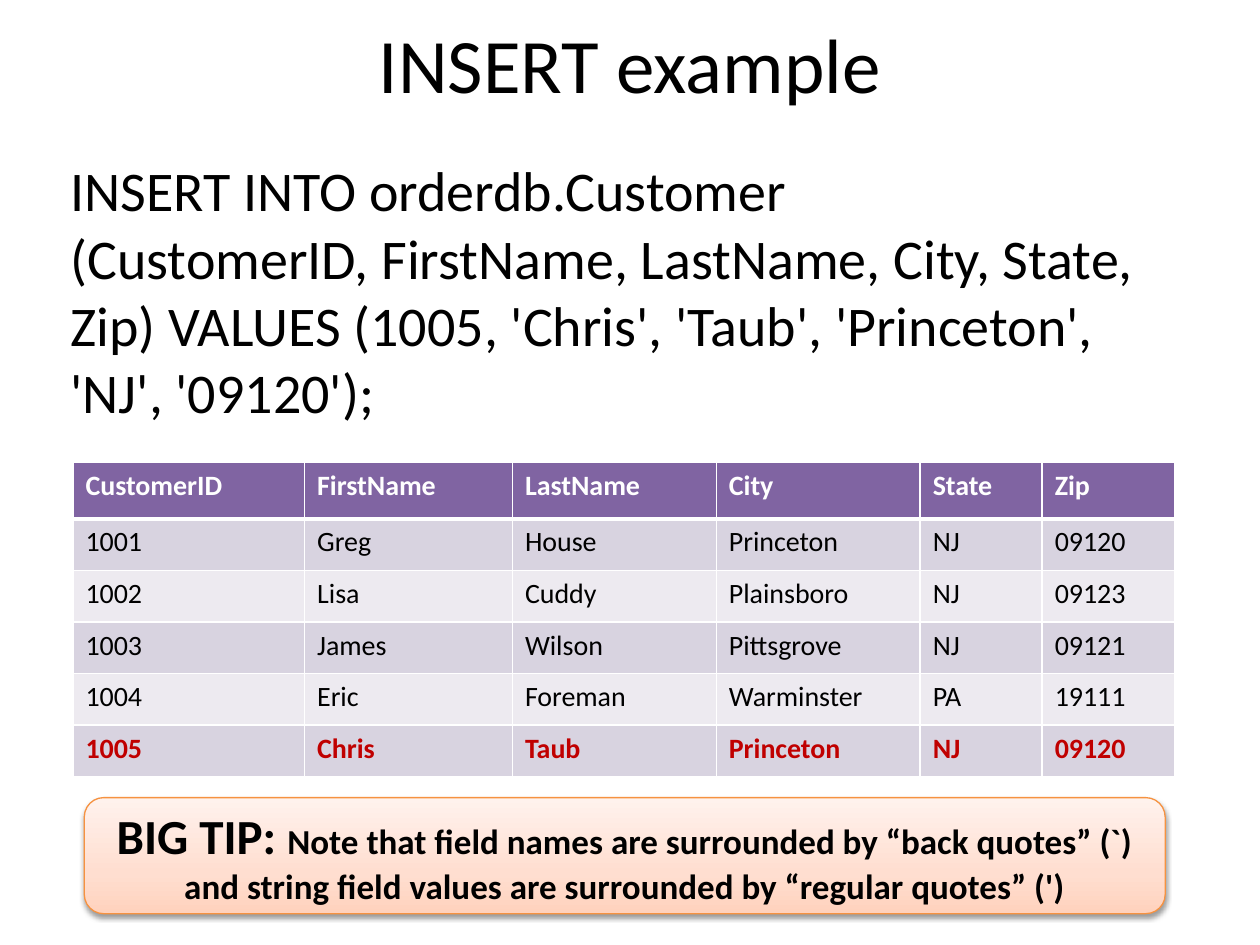
from lxml import etree
from pptx import Presentation, util as u
from pptx.dml.color import RGBColor
from pptx.enum import shapes, text
from pptx.oxml import parse_xml
from pptx.oxml.ns import qn

FONT = "Calibri"
COLORS = {
    "text": "000000", "white": "FFFFFF", "header": "8064A2",
    "band_dark": "D8D3E0", "band_light": "EDEAF0", "new_row": "C00000",
    "tip_line": "F69240", "tip_low": "FFD2BD", "tip_mid": "FFDED0",
    "tip_high": "FFF2ED",
}
NS = 'xmlns:a="http://schemas.openxmlformats.org/drawingml/2006/main"'

STATEMENT = ("INSERT INTO orderdb.Customer \v(CustomerID, FirstName, LastName, "
             "City, State, Zip) VALUES (1005, 'Chris', 'Taub', 'Princeton', "
             "'NJ', '09120');")
CUSTOMERS = [
    ("CustomerID", "FirstName", "LastName", "City", "State", "Zip"),
    ("1001", "Greg", "House", "Princeton", "NJ", "09120"),
    ("1002", "Lisa", "Cuddy", "Plainsboro", "NJ", "09123"),
    ("1003", "James", "Wilson", "Pittsgrove", "NJ", "09121"),
    ("1004", "Eric", "Foreman", "Warminster", "PA", "19111"),
    ("1005", "Chris", "Taub", "Princeton", "NJ", "09120"),
]
COLUMN_WIDTHS = (4.67, 4.19, 4.11, 4.11, 2.46, 2.67)
HEADER_HEIGHT, ROW_HEIGHT = 1.14, 1.04
TIP = (("BIG TIP: ", 28),
       ("Note that field names are surrounded by “back quotes” (`) and string "
        "field values are surrounded by “regular quotes” (')", 20))


def rgb(name):
    return RGBColor.from_string(COLORS[name])


def cm_box(box):
    return [u.Cm(length) for length in box]


def style(run, size, color="text", bold=False):
    run.font.name = FONT
    run.font.size = u.Pt(size)
    run.font.bold = bold
    run.font.color.rgb = rgb(color)


def add_text(slide, box, content, size, anchor, align, before=0):
    frame = slide.shapes.add_textbox(*cm_box(box)).text_frame
    frame.word_wrap = True
    frame.vertical_anchor = anchor
    frame.text = content
    paragraph = frame.paragraphs[0]
    paragraph.alignment = align
    paragraph.space_before = u.Pt(before)
    for run in paragraph.runs:
        style(run, size)


def add_borders(cell, top, bottom):
    properties = cell._tc.get_or_add_tcPr()
    for side, points in (("L", 1), ("R", 1), ("T", top), ("B", bottom)):
        line = etree.SubElement(properties, qn(f"a:ln{side}"), w=str(u.Pt(points)))
        fill = etree.SubElement(line, qn("a:solidFill"))
        etree.SubElement(fill, qn("a:srgbClr"), val=COLORS["white"])


def add_customers(slide, box):
    table = slide.shapes.add_table(
        len(CUSTOMERS), len(COLUMN_WIDTHS), *cm_box(box)).table
    for column, width in zip(table.columns, COLUMN_WIDTHS):
        column.width = u.Cm(width)
    last = len(CUSTOMERS) - 1
    for r, customer in enumerate(CUSTOMERS):
        table.rows[r].height = u.Cm(ROW_HEIGHT if r else HEADER_HEIGHT)
        fill = "header" if r == 0 else "band_dark" if r % 2 else "band_light"
        color = {0: "white", last: "new_row"}.get(r, "text")
        for c, value in enumerate(customer):
            cell = table.cell(r, c)
            # The heavy rule lies between the header and the first customer
            add_borders(cell, 3 if r == 1 else 1, 3 if r == 0 else 1)
            cell.fill.solid()
            cell.fill.fore_color.rgb = rgb(fill)
            cell.text = value
            style(cell.text_frame.paragraphs[0].runs[0], 16, color,
                  bold=r in (0, last))


def add_tip(slide, box):
    tip = slide.shapes.add_shape(
        shapes.MSO_SHAPE.ROUNDED_RECTANGLE, *cm_box(box))
    tip.line.color.rgb = rgb("tip_line")
    tip.line.width = u.Pt(0.75)

    # Gradient rising from the bottom edge, and a soft shadow below
    stops = "".join(
        f'<a:gs pos="{percent * 1000}"><a:srgbClr val="{COLORS[name]}"/></a:gs>'
        for percent, name in ((0, "tip_low"), (35, "tip_mid"), (100, "tip_high")))
    properties = tip._element.spPr
    properties.find(qn("a:prstGeom")).addnext(parse_xml(
        f'<a:gradFill {NS} rotWithShape="1"><a:gsLst>{stops}</a:gsLst>'
        '<a:lin ang="16200000" scaled="0"/></a:gradFill>'))
    properties.append(parse_xml(
        f'<a:effectLst {NS}><a:outerShdw blurRad="{u.Pt(3.1)}" '
        f'dist="{u.Pt(1.6)}" dir="5400000" rotWithShape="0">'
        f'<a:srgbClr val="{COLORS["text"]}"><a:alpha val="38000"/></a:srgbClr>'
        '</a:outerShdw></a:effectLst>'))

    frame = tip.text_frame
    frame.word_wrap = True
    frame.vertical_anchor = text.MSO_ANCHOR.MIDDLE
    paragraph = frame.paragraphs[0]
    paragraph.alignment = text.PP_ALIGN.CENTER
    for words, size in TIP:
        run = paragraph.add_run()
        run.text = words
        style(run, size, bold=True)


def main():
    deck = Presentation()
    deck.slide_width, deck.slide_height = u.Cm(25.4), u.Cm(19.05)
    slide = deck.slides.add_slide(deck.slide_layouts[6])

    # Title and statement
    add_text(slide, (1.27, 0, 22.86, 2.54), "INSERT example", 44,
             text.MSO_ANCHOR.MIDDLE, text.PP_ALIGN.CENTER)
    add_text(slide, (1.17, 3.02, 22.86, 12.57), STATEMENT, 32,
             text.MSO_ANCHOR.TOP, text.PP_ALIGN.LEFT, before=2)

    # Resulting table and tip
    add_customers(slide, (1.47, 9.32, 22.21, 6.34))
    add_tip(slide, (1.7, 16.08, 21.79, 2.34))

    deck.save("out.pptx")


if __name__ == "__main__":
    main()
